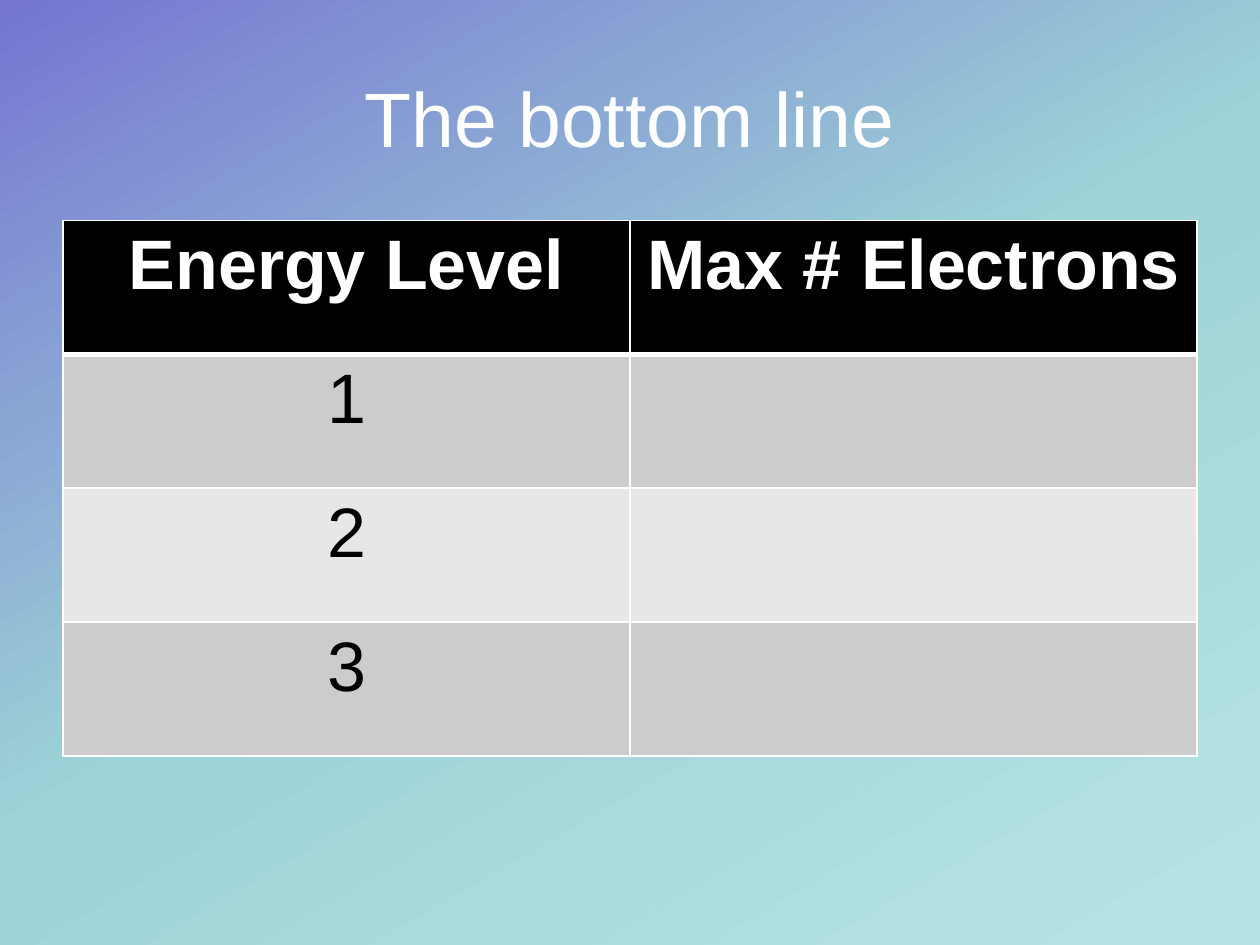
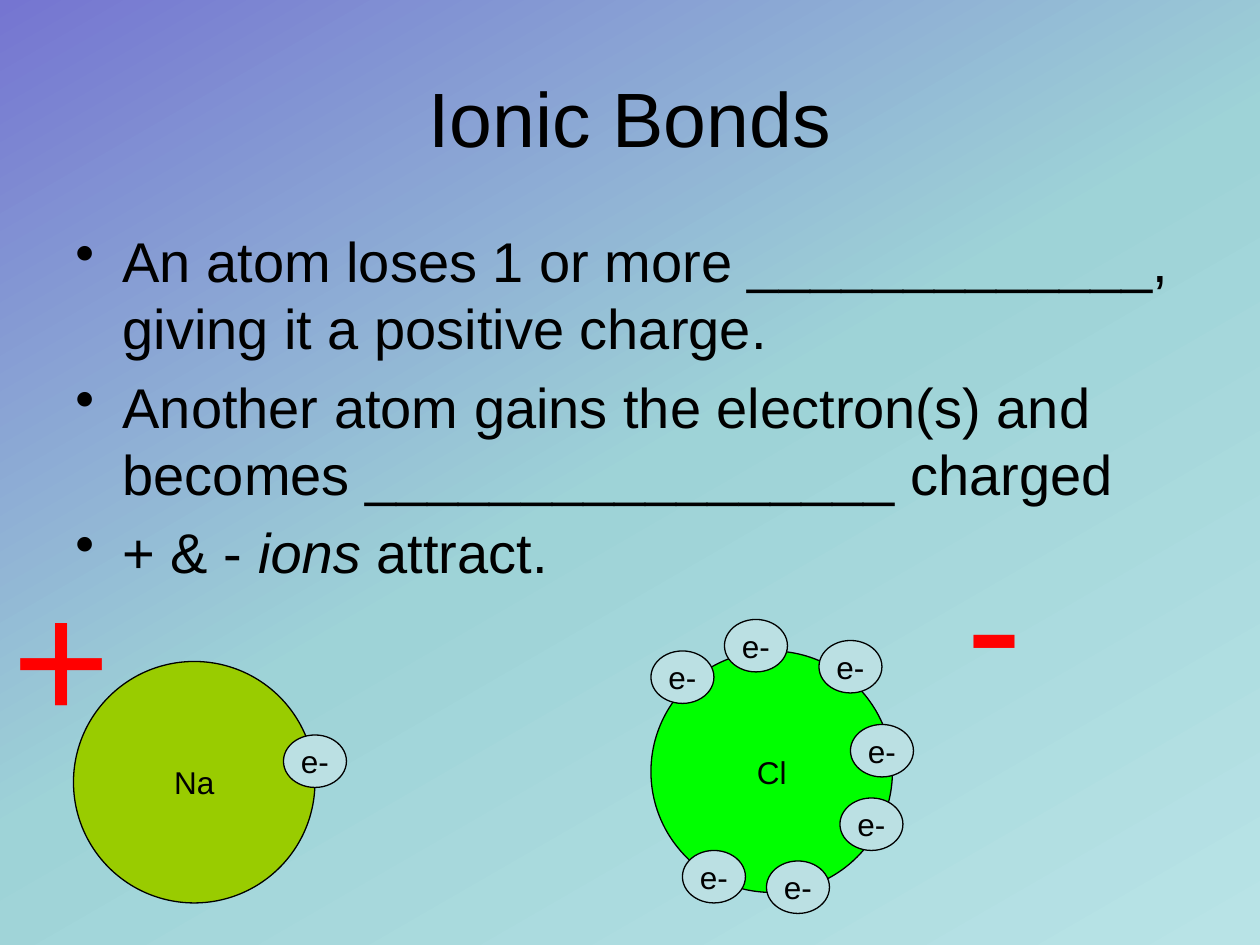
import copy
import dataclasses
import pptx
import pptx.util
import pptx.dml.color
import pptx.enum.shapes
import pptx.enum.text
import pptx.oxml
import pptx.oxml.ns

Pt = pptx.util.Pt
Color = pptx.dml.color.RGBColor.from_string
Align = pptx.enum.text.PP_ALIGN
Anchor = pptx.enum.text.MSO_ANCHOR


@dataclasses.dataclass(frozen=True)
class Theme:
    font: str = "Arial"
    black: str = "000000"
    white: str = "FFFFFF"
    band_dark: str = "CCCCCC"
    band_light: str = "E7E7E7"
    sodium: str = "99CC00"
    chlorine: str = "00FF00"
    electron: str = "BBE0E3"
    charge: str = "FF0000"
    gradient: tuple = ((0, "7575D1"), (0.5, "9ED3D7"), (1, "B8E3E6"))
    title_size: int = 44
    table_size: int = 40
    body_size: int = 32
    atom_size: int = 18
    charge_size: int = 96


theme = Theme()


def write(para, text, size, color, **formats):
    span = para.add_run()
    span.text = text
    span.font.color.rgb = Color(color)
    for name, value in {"name": theme.font, "size": Pt(size), **formats}.items():
        setattr(span.font, name, value)


def add_text_box(page, left, top, width, height, **formats):
    box = page.shapes.add_textbox(Pt(left), Pt(top), Pt(width), Pt(height))
    for name, value in {"word_wrap": True, **formats}.items():
        setattr(box.text_frame, name, value)
    return box.text_frame


deck = pptx.Presentation()
deck.slide_width, deck.slide_height = Pt(720), Pt(540)

pages = []
for title, title_color in (("The bottom line", theme.white), ("Ionic Bonds", theme.black)):
    page = deck.slides.add_slide(deck.slide_layouts[6])
    fill = page.background.fill
    fill.gradient()
    fill.gradient_angle = 300
    stop_list = page.element.find(".//" + pptx.oxml.ns.qn("a:gsLst"))
    stop_list.append(copy.deepcopy(stop_list[-1]))
    for stop, (position, color) in zip(fill.gradient_stops, theme.gradient):
        stop.position = position
        stop.color.rgb = Color(color)
    frame = add_text_box(page, 36, 21.6, 648, 90, vertical_anchor=Anchor.MIDDLE)
    frame.paragraphs[0].alignment = Align.CENTER
    write(frame.paragraphs[0], title, theme.title_size, title_color)
    pages.append(page)

table_page, bonds_page = pages

rows = (("Energy Level", "Max # Electrons"), ("1", ""), ("2", ""), ("3", ""))
table = table_page.shapes.add_table(4, 2, Pt(36), Pt(126), Pt(648), Pt(306)).table
for row_index, row in enumerate(rows):
    header = row_index == 0
    band = theme.black if header else (theme.band_light, theme.band_dark)[row_index % 2]
    for column_index, text in enumerate(row):
        cell = table.cell(row_index, column_index)
        para = cell.text_frame.paragraphs[0]
        para.alignment = Align.CENTER
        para.font.size = Pt(theme.table_size)
        if text:
            write(para, text, theme.table_size, theme.white if header else theme.black, bold=header)
        cell.fill.solid()
        cell.fill.fore_color.rgb = Color(band)
        widths = {"L": 1, "R": 1, "T": 3 if row_index == 1 else 1, "B": 3 if header else 1}
        for index, (side, width) in enumerate(widths.items()):
            border = pptx.oxml.parse_xml(
                f'<a:ln{side} {pptx.oxml.ns.nsdecls("a")} w="{Pt(width)}"><a:solidFill>'
                f'<a:srgbClr val="{theme.white}"/></a:solidFill></a:ln{side}>')
            cell._tc.get_or_add_tcPr().insert(index, border)

statements = (
    (("An atom loses 1 or more _____________, giving it a positive charge.", False),),
    (("Another atom gains the electron(s) and becomes _________________ charged", False),),
    (("+ & - ", False), ("ions", True), (" attract.", False)),
)
frame = add_text_box(bonds_page, 36, 126, 648, 356.4)
for index, statement in enumerate(statements):
    para = frame.add_paragraph() if index else frame.paragraphs[0]
    para.space_before = Pt(6.4)
    properties = para._p.get_or_add_pPr()
    properties.set("marL", str(Pt(27)))
    properties.set("indent", str(-Pt(27)))
    properties.append(pptx.oxml.parse_xml(
        f'<a:buChar {pptx.oxml.ns.nsdecls("a")} char="•"/>'))
    for text, italic in statement:
        write(para, text, theme.body_size, theme.black, italic=italic)

electron_places = ((372, 372), (414, 354), (468, 366), (486, 414),
                   (480, 456), (438, 492), (390, 486), (162, 420))
circles = [("Na", 42, 378, 138, 138, theme.sodium), ("Cl", 372, 372, 138, 138, theme.chlorine)]
circles += [("e-", left, top, 36, 30, theme.electron) for left, top in electron_places]
for label, left, top, width, height, color in circles:
    circle = bonds_page.shapes.add_shape(
        pptx.enum.shapes.MSO_SHAPE.OVAL, Pt(left), Pt(top), Pt(width), Pt(height))
    circle.shadow.inherit = False
    circle.fill.solid()
    circle.fill.fore_color.rgb = Color(color)
    circle.line.color.rgb = Color(theme.black)
    circle.line.width = Pt(0.75)
    circle.text_frame.word_wrap = False
    circle.text_frame.vertical_anchor = Anchor.MIDDLE
    para = circle.text_frame.paragraphs[0]
    para.alignment = Align.CENTER
    write(para, label, theme.atom_size, theme.black)

for sign, left, top, width in (("-", 545, 293, 46.8), ("+", 0, 312, 70.6)):
    frame = add_text_box(bonds_page, left, top, width, 122.4, word_wrap=False,
                         auto_size=pptx.enum.text.MSO_AUTO_SIZE.SHAPE_TO_FIT_TEXT)
    write(frame.paragraphs[0], sign, theme.charge_size, theme.charge)

deck.save("out.pptx")
